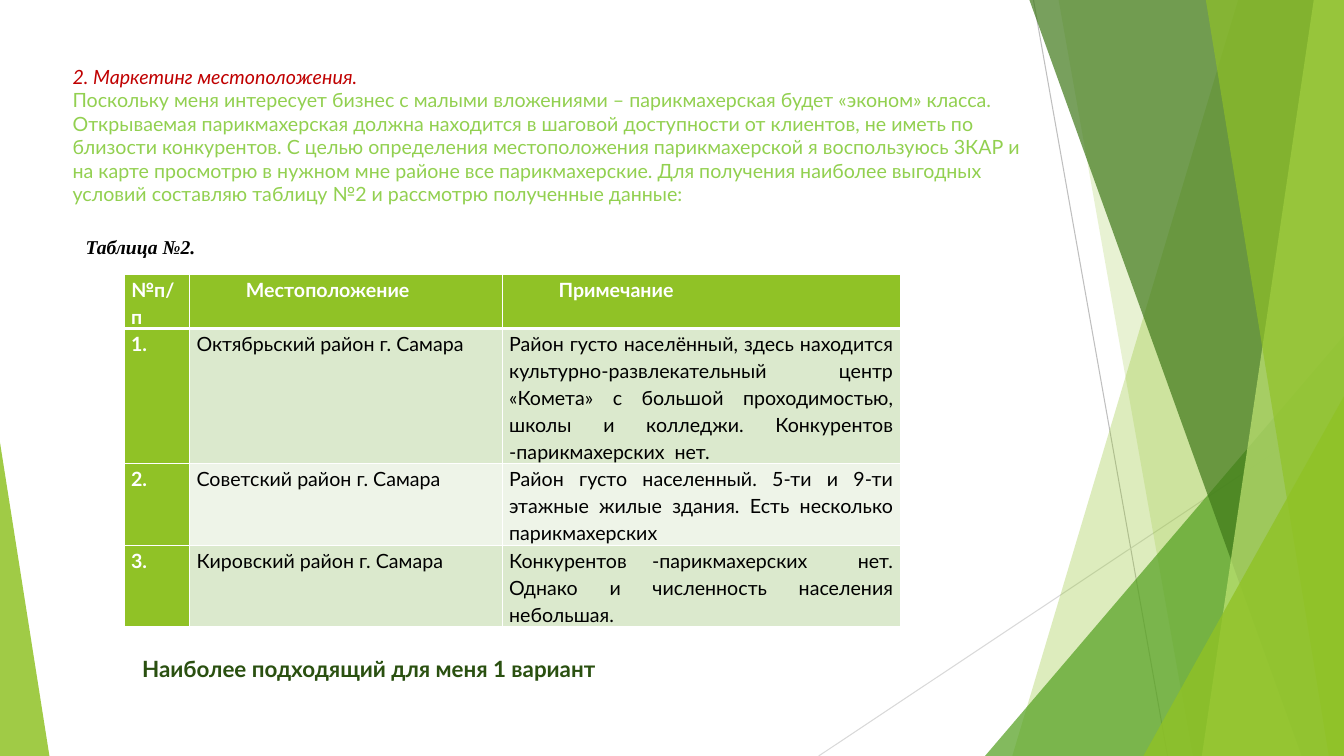
import pptx
import pptx.dml.color
import pptx.enum.shapes
import pptx.enum.text
import pptx.oxml
import pptx.oxml.ns
import pptx.util
from pptx.util import Inches

ALIGN = pptx.enum.text.PP_ALIGN
ANCHOR = pptx.enum.text.MSO_ANCHOR
NS = pptx.oxml.ns.nsdecls("a")
GREEN = "90C226"
BODY_FONT = "Lato"


def paint(color_format, hex_color):
    color_format.rgb = pptx.dml.color.RGBColor.from_string(hex_color)


def fill_solid(fill, hex_color, opacity=100):
    fill.solid()
    paint(fill.fore_color, hex_color)
    if opacity < 100:
        alpha = pptx.oxml.parse_xml(f'<a:alpha {NS} val="{opacity * 1000}"/>')
        fill.fore_color._xFill[0].append(alpha)


def write(paragraph, text, size=14, font=BODY_FONT, color="000000", bold=False,
          italic=False, align=ALIGN.LEFT, indent=0, spacing=1.0):
    paragraph.alignment = align
    paragraph.line_spacing = spacing
    if indent:
        properties = paragraph._p.get_or_add_pPr()
        properties.set("marL", "0")
        properties.set("indent", str(Inches(indent)))
    run = paragraph.add_run()
    run.text = text
    run.font.size = pptx.util.Pt(size)
    run.font.name = font
    run.font.bold = bold
    run.font.italic = italic
    paint(run.font.color, color)


def set_margins(holder, side, vertical):
    holder.margin_left = holder.margin_right = Inches(side)
    holder.margin_top = holder.margin_bottom = Inches(vertical)


def add_ray(slide, start, end, color):
    ray = slide.shapes.add_connector(
        pptx.enum.shapes.MSO_CONNECTOR.STRAIGHT, *map(Inches, start + end))
    ray.line.width = pptx.util.Pt(0.75)
    paint(ray.line.color, color)
    ray._element.spPr.append(pptx.oxml.parse_xml(f"<a:effectLst {NS}/>"))


def finish_facet(facet, color, opacity):
    facet.shadow.inherit = False
    facet.line.fill.background()
    fill_solid(facet.fill, color, opacity)


def add_band(slide, top_left, bottom_left, color, opacity, right, bottom):
    corners = [(top_left, 0), (right, 0), (right, bottom), (bottom_left, bottom)]
    points = [(Inches(x), Inches(y)) for x, y in corners]
    outline = slide.shapes.build_freeform(*points[0], scale=1.0)
    outline.add_line_segments(points[1:], close=True)
    finish_facet(outline.convert_to_shape(), color, opacity)


def add_wedge(slide, left, top, width, bottom, peak, color, opacity):
    wedge = slide.shapes.add_shape(
        pptx.enum.shapes.MSO_SHAPE.ISOSCELES_TRIANGLE,
        *map(Inches, (left, top, width, bottom - top)))
    wedge.adjustments[0] = peak
    finish_facet(wedge, color, opacity)


def add_facets(slide, right, bottom):
    add_ray(slide, (10.25, 0), (11.58, bottom), "BFBFBF")
    add_ray(slide, (right, 4.03), (8.12, bottom), "D9D9D9")
    add_band(slide, 12.28, 10.04, GREEN, 30, right, bottom)
    add_band(slide, 10.5, 11.83, GREEN, 20, right, bottom)
    add_wedge(slide, 9.77, 3.33, right - 9.77, bottom, 1, "54A021", 72)
    for top_left, bottom_left, color, opacity in (
            (10.21, 12.91, "3F7819", 70),
            (13.03, 11.92, "C0E474", 70),
            (11.96, 13.18, GREEN, 65)):
        add_band(slide, top_left, bottom_left, color, opacity, right, bottom)
    add_wedge(slide, 11.34, 3.93, right - 11.34, bottom, 1, GREEN, 80)
    add_wedge(slide, 0, 4.39, 0.49, bottom, 0, GREEN, 85)


def add_title(slide, left, top, width, height):
    title = slide.shapes.title
    title.left, title.top, title.width, title.height = map(
        Inches, (left, top, width, height))
    frame = title.text_frame
    frame.auto_size = pptx.enum.text.MSO_AUTO_SIZE.NONE
    frame.word_wrap = True
    frame.vertical_anchor = ANCHOR.TOP
    set_margins(frame, 0.1, 0.05)
    paragraph = frame.paragraphs[0]
    write(paragraph, "2. Маркетинг местоположения.", color="C00000", italic=True)
    paragraph.add_line_break()
    write(paragraph,
          "Поскольку меня интересует бизнес с малыми вложениями – парикмахерская "
          "будет «эконом» класса. Открываемая парикмахерская должна находится в "
          "шаговой доступности от клиентов, не иметь по близости конкурентов. "
          "С целью определения местоположения парикмахерской я воспользуюсь 3КАР "
          "и на карте просмотрю в нужном мне районе все парикмахерские. Для "
          "получения наиболее выгодных условий составляю таблицу №2 и рассмотрю "
          "полученные данные:", color="92D050")


def add_note(slide, box, text, side=0.1, anchor=ANCHOR.TOP, **text_format):
    frame = slide.shapes.add_textbox(*map(Inches, box)).text_frame
    frame.word_wrap = True
    frame.vertical_anchor = anchor
    set_margins(frame, side, 0.05)
    write(frame.paragraphs[0], text, **text_format)


def set_borders(cell, **widths):
    properties = cell._tc.get_or_add_tcPr()
    for edge, width in widths.items():
        properties.append(pptx.oxml.parse_xml(
            f'<a:ln{edge} {NS} w="{pptx.util.Pt(width)}"><a:solidFill>'
            f'<a:srgbClr val="FFFFFF"/></a:solidFill></a:ln{edge}>'))


def add_districts(slide, left, top, width, height):
    content = [
        ("№п/п", "Местоположение", "Примечание"),
        ("1.", "Октябрьский район г. Самара",
         "Район густо населённый, здесь находится культурно-развлекательный центр "
         "«Комета» с большой проходимостью, школы и колледжи. Конкурентов "
         "-парикмахерских  нет."),
        ("2.", "Советский район г. Самара",
         "Район густо населенный. 5-ти и 9-ти этажные жилые здания. "
         "Есть несколько парикмахерских"),
        ("3.", "Кировский район г. Самара",
         "Конкурентов -парикмахерских  нет. Однако и численность населения "
         "небольшая."),
    ]
    districts = slide.shapes.add_table(
        len(content), 3, *map(Inches, (left, top, width, height))).table
    for column, column_width in zip(districts.columns, (0.65, 3.1, 3.95)):
        column.width = Inches(column_width)
    for row, row_height in zip(districts.rows, (0.54, 1.34, 0.81, 0.81)):
        row.height = Inches(row_height)
    for row_index, texts in enumerate(content):
        for column_index, text in enumerate(texts):
            cell = districts.cell(row_index, column_index)
            is_header = row_index == 0
            is_heading = is_header or column_index == 0
            set_margins(cell, 0.07, 0)
            set_borders(cell, L=1, R=1, T=3 if row_index == 1 else 1,
                        B=3 if is_header else 1)
            stripe = "DBE9CD" if row_index % 2 else "EEF4E8"
            fill_solid(cell.fill, GREEN if is_heading else stripe)
            write(cell.text_frame.paragraphs[0], text, bold=is_heading,
                  color="FFFFFF" if is_heading else "000000",
                  align=ALIGN.JUSTIFY, spacing=1.15,
                  indent=0.49 if is_header and column_index else 0)


def main():
    deck = pptx.Presentation()
    deck.slide_width, deck.slide_height = Inches(13.33), Inches(7.5)
    slide = deck.slides.add_slide(deck.slide_layouts.get_by_name("Title Only"))
    add_facets(slide, 13.33, 7.5)
    add_title(slide, 0.62, 0.59, 9.63, 1.69)
    add_districts(slide, 1.23, 2.72, 7.7, 3.5)
    add_note(slide, (0.26, 2.28, 4.37, 0.34), "Таблица №2.", anchor=ANCHOR.MIDDLE,
             font="Times New Roman", bold=True, italic=True,
             align=ALIGN.JUSTIFY, indent=0.49)
    add_note(slide, (1.25, 6.45, 5.01, 0.37),
             "Наиболее подходящий для меня 1 вариант", side=0.16,
             size=16, color="2A5010", bold=True)
    deck.save("out.pptx")


if __name__ == "__main__":
    main()
